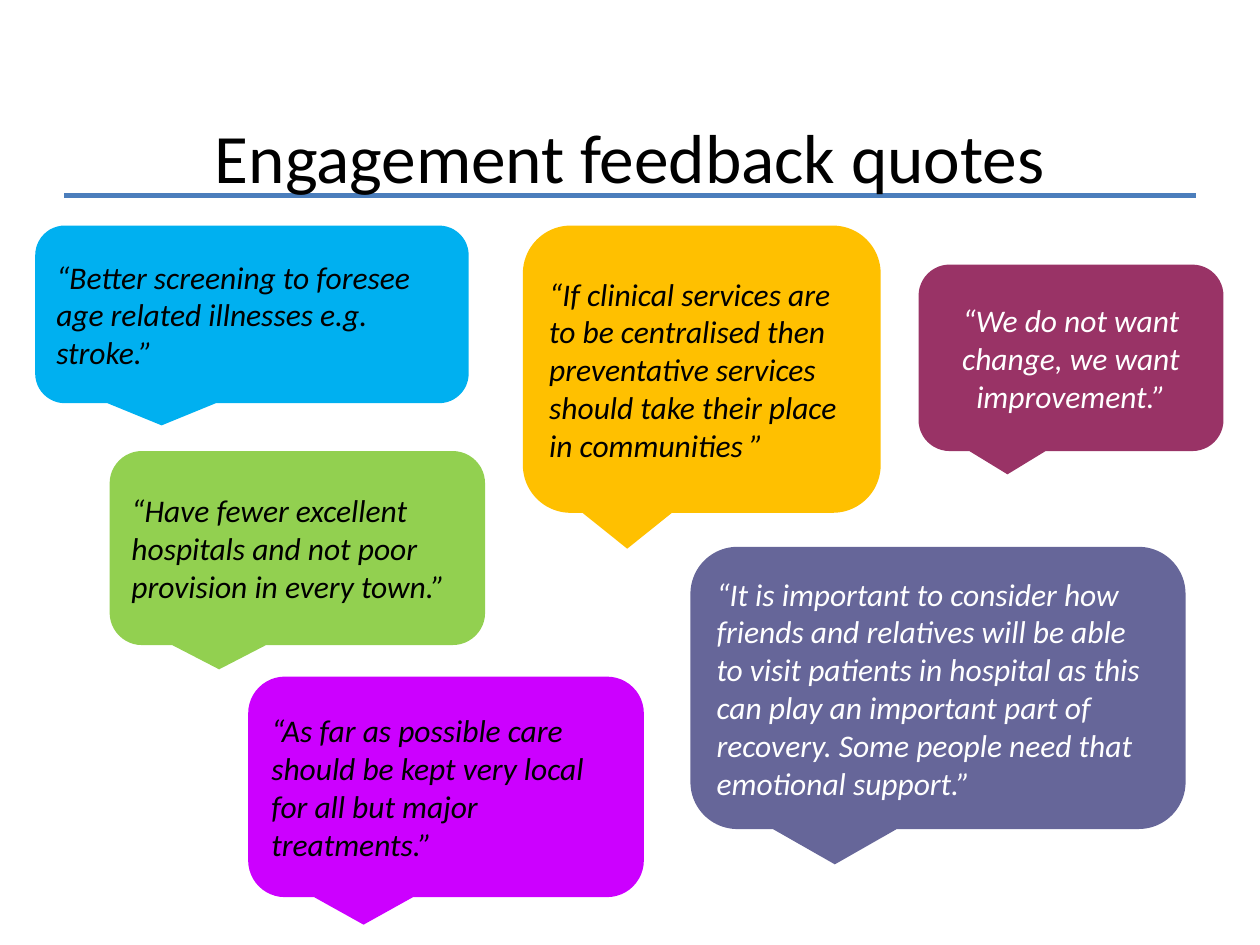
from lxml.etree import SubElement
from pptx import Presentation
from pptx.dml.color import RGBColor
from pptx.enum.shapes import MSO_CONNECTOR, MSO_SHAPE
from pptx.enum.text import MSO_ANCHOR, PP_ALIGN
from pptx.oxml.ns import qn
from pptx.util import Inches, Pt

BLACK = RGBColor(0x00, 0x00, 0x00)
WHITE = RGBColor(0xFF, 0xFF, 0xFF)
RULE_BLUE = RGBColor(0x4B, 0x7E, 0xBC)
AMBER = RGBColor(0xFF, 0xC0, 0x00)
PLUM = RGBColor(0x99, 0x33, 0x66)
MAGENTA = RGBColor(0xCC, 0x00, 0xFF)
GREEN = RGBColor(0x92, 0xD0, 0x50)
SLATE = RGBColor(0x66, 0x66, 0x99)
SKY = RGBColor(0x00, 0xB0, 0xF0)

FONT = "Calibri"
HEADING = "Engagement feedback quotes"
QUOTES = [
    ("“If clinical services are to be centralised then preventative services "
     "should take their place in communities ”",
     (4.15, 1.79, 2.84, 2.28), AMBER, BLACK, PP_ALIGN.LEFT),
    ("“We do not want change, we want improvement.”",
     (7.29, 2.1, 2.42, 1.48), PLUM, WHITE, PP_ALIGN.CENTER),
    ("“As far as possible care should be kept very local for all but major "
     "treatments.”",
     (1.97, 5.37, 3.14, 1.75), MAGENTA, BLACK, PP_ALIGN.LEFT),
    ("“Have fewer excellent hospitals and not poor provision in every town.”",
     (0.87, 3.58, 2.98, 1.54), GREEN, BLACK, PP_ALIGN.LEFT),
    ("“It is important to consider how friends and relatives will be able to "
     "visit patients in hospital as this can play an important part of "
     "recovery. Some people need that emotional support.”",
     (5.48, 4.34, 3.93, 2.24), SLATE, WHITE, PP_ALIGN.LEFT),
    ("“Better screening to foresee age related illnesses e.g. stroke.”",
     (0.28, 1.79, 3.44, 1.41), SKY, BLACK, PP_ALIGN.LEFT),
]


def write(shape, text, size, color, align, italic=False):
    frame = shape.text_frame
    frame.text = text
    frame.word_wrap = True
    frame.vertical_anchor = MSO_ANCHOR.MIDDLE
    paragraph = frame.paragraphs[0]
    paragraph.alignment = align
    font = paragraph.font
    font.name = FONT
    font.size = Pt(size)
    font.italic = italic
    font.color.rgb = color


def add_heading(slide):
    title = slide.shapes.title
    title.left, title.top = Inches(0.5), Inches(0.92)
    title.width, title.height = Inches(9), Inches(0.64)
    write(title, HEADING, 39.6, BLACK, PP_ALIGN.CENTER)

    rule = slide.shapes.add_connector(
        MSO_CONNECTOR.STRAIGHT,
        Inches(0.51), Inches(1.55), Inches(9.49), Inches(1.55))
    rule.line.color.rgb = RULE_BLUE
    rule.line.width = Pt(3)
    SubElement(rule._element.spPr, qn("a:effectLst"))
    title._element.addprevious(rule._element)


def add_quote(slide, text, box, fill, color, align):
    bubble = slide.shapes.add_shape(
        MSO_SHAPE.ROUNDED_RECTANGULAR_CALLOUT, *map(Inches, box))
    bubble.shadow.inherit = False
    bubble.fill.solid()
    bubble.fill.fore_color.rgb = fill
    bubble.line.fill.background()
    write(bubble, text, 18, color, align, italic=True)


def main():
    deck = Presentation()
    deck.slide_width, deck.slide_height = Inches(10), Inches(7.5)
    slide = deck.slides.add_slide(deck.slide_layouts[5])
    add_heading(slide)
    for quote in QUOTES:
        add_quote(slide, *quote)
    deck.save("out.pptx")


if __name__ == "__main__":
    main()
